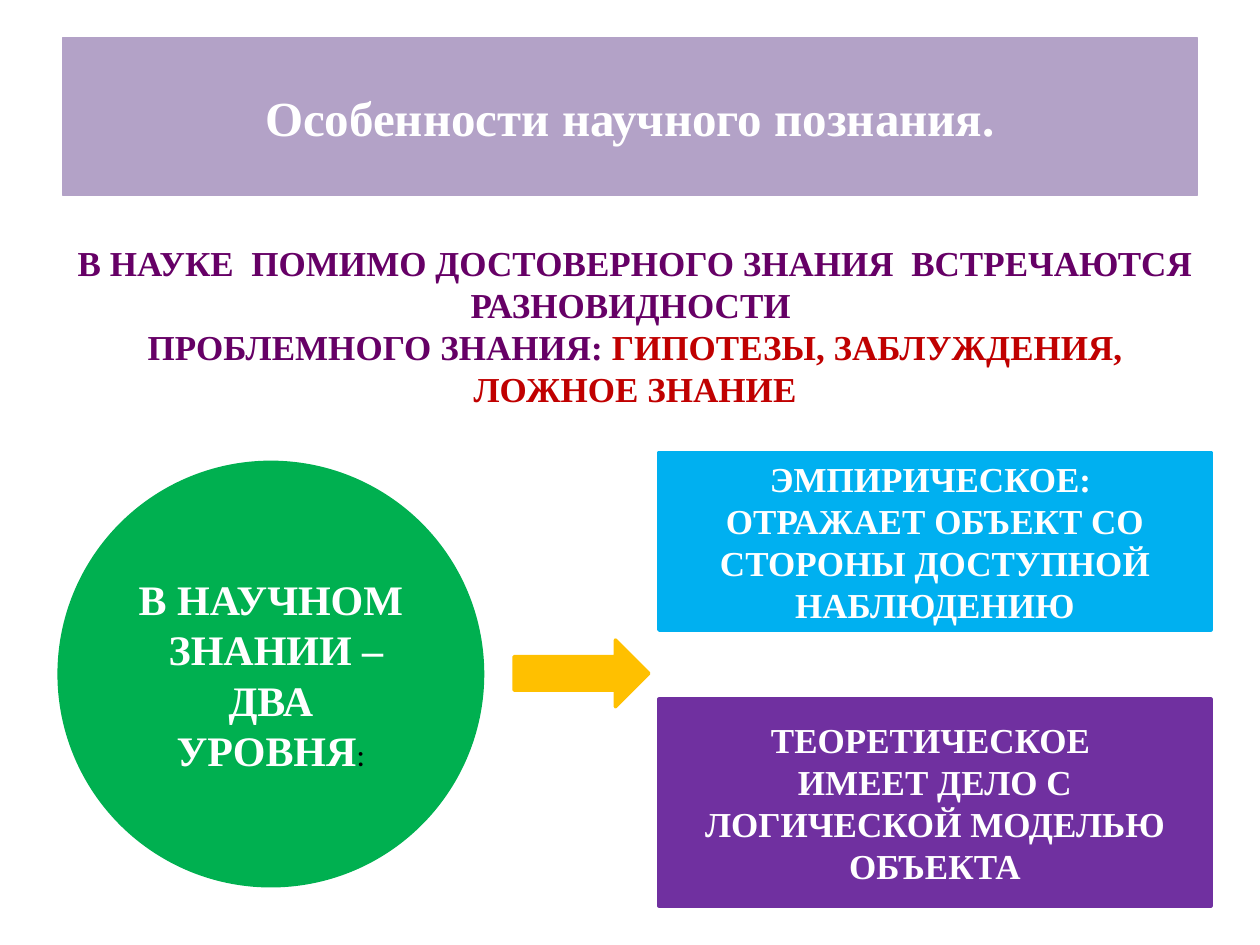
from pptx import Presentation
from pptx.dml.color import RGBColor
from pptx.enum.shapes import MSO_SHAPE
from pptx.enum.text import MSO_ANCHOR, PP_ALIGN
from pptx.util import Inches, Pt

WHITE = RGBColor(0xFF, 0xFF, 0xFF)
BLACK = RGBColor(0x00, 0x00, 0x00)
LILAC = RGBColor(0xB3, 0xA2, 0xC7)
PLUM = RGBColor(0x66, 0x00, 0x66)
RED = RGBColor(0xC0, 0x00, 0x00)
GREEN = RGBColor(0x00, 0xB0, 0x50)
GOLD = RGBColor(0xFF, 0xC0, 0x00)
BLUE = RGBColor(0x00, 0xB0, 0xF0)
VIOLET = RGBColor(0x70, 0x30, 0xA0)

SERIF = "Times New Roman"


def style(size, color, name=SERIF, bold=True):
    return {"size": Pt(size), "name": name, "bold": bold, "color": color}


HEAD = style(28, WHITE)
NOTE = style(20, PLUM)
ALERT = style(20, RED)
ROUND = style(24, WHITE)
COLON = style(18, BLACK, "Calibri", False)
LEVEL = style(20, WHITE)

LEFT, RIGHT = 0.47, 5.23
WIDE, HALF = 9.14, 4.38

ITEMS = [
    (MSO_SHAPE.RECTANGLE, (0.5, 0.3, 9, 1.25), LILAC, 0.75, [
        [("Особенности научного познания.", HEAD)],
    ]),
    (MSO_SHAPE.RECTANGLE, (LEFT, 1.88, WIDE, 1.41), WHITE, 2, [
        [("В НАУКЕ  ПОМИМО ДОСТОВЕРНОГО ЗНАНИЯ  ВСТРЕЧАЮТСЯ РАЗНОВИДНОСТИ ", NOTE)],
        [("ПРОБЛЕМНОГО ЗНАНИЯ: ", NOTE),
         ("ГИПОТЕЗЫ, ЗАБЛУЖДЕНИЯ, ЛОЖНОЕ ЗНАНИЕ", ALERT)],
    ]),
    (MSO_SHAPE.OVAL, (LEFT, 3.67, 3.36, 3.36), GREEN, 2, [
        [("В НАУЧНОМ  ЗНАНИИ –", ROUND)],
        [("ДВА УРОВНЯ", ROUND), (":", COLON)],
    ]),
    (MSO_SHAPE.RIGHT_ARROW, (4.08, 5.08, 1.07, 0.53), GOLD, 2, []),
    (MSO_SHAPE.RECTANGLE, (RIGHT, 3.59, HALF, 1.41), BLUE, 2, [
        [("ЭМПИРИЧЕСКОЕ: ", LEVEL)],
        [("ОТРАЖАЕТ ОБЪЕКТ СО СТОРОНЫ ДОСТУПНОЙ НАБЛЮДЕНИЮ", LEVEL)],
    ]),
    (MSO_SHAPE.RECTANGLE, (RIGHT, 5.55, HALF, 1.64), VIOLET, 2, [
        [("ТЕОРЕТИЧЕСКОЕ ", LEVEL)],
        [("ИМЕЕТ ДЕЛО С ЛОГИЧЕСКОЙ МОДЕЛЬЮ ОБЪЕКТА", LEVEL)],
    ]),
]


def add_run(para, text, form):
    run = para.add_run()
    run.text = text
    for key, value in form.items():
        if key == "color":
            run.font.color.rgb = value
        else:
            setattr(run.font, key, value)


def add_text(frame, paras):
    frame.word_wrap = True
    frame.vertical_anchor = MSO_ANCHOR.MIDDLE
    for i, runs in enumerate(paras):
        para = frame.add_paragraph() if i else frame.paragraphs[0]
        para.alignment = PP_ALIGN.CENTER
        for text, form in runs:
            add_run(para, text, form)


def add_item(slide, kind, box, color, width, paras):
    shape = slide.shapes.add_shape(kind, *map(Inches, box))
    shape.shadow.inherit = False
    shape.fill.solid()
    shape.fill.fore_color.rgb = color
    shape.line.color.rgb = color
    shape.line.width = Pt(width)
    add_text(shape.text_frame, paras)


def main():
    deck = Presentation()
    deck.slide_width, deck.slide_height = Inches(10), Inches(7.5)
    slide = deck.slides.add_slide(deck.slide_layouts[6])
    for item in ITEMS:
        add_item(slide, *item)
    deck.save("out.pptx")


if __name__ == "__main__":
    main()
